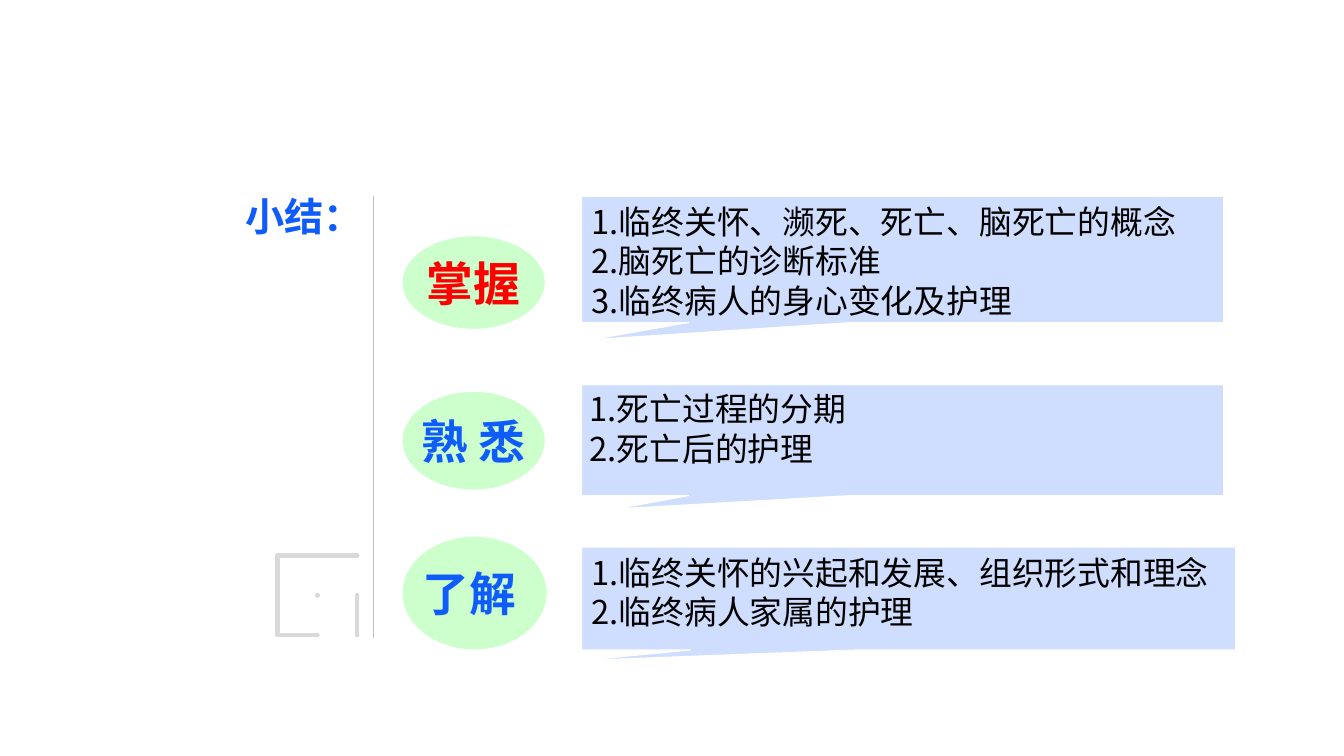
"""Build the summary slide with three learning levels and their topics."""
from math import dist
from pptx import Presentation
from pptx.dml.color import RGBColor
from pptx.enum.shapes import MSO_CONNECTOR, MSO_SHAPE
from pptx.enum.text import MSO_ANCHOR, PP_ALIGN
from pptx.oxml.xmlchemy import OxmlElement
from pptx.util import Cm, Pt

STRAIGHT = MSO_CONNECTOR.STRAIGHT
OVAL = MSO_SHAPE.OVAL
CALLOUT = MSO_SHAPE.RECTANGULAR_CALLOUT
TOP, MIDDLE = MSO_ANCHOR.TOP, MSO_ANCHOR.MIDDLE
LEFT, CENTER, RIGHT = PP_ALIGN.LEFT, PP_ALIGN.CENTER, PP_ALIGN.RIGHT
WHITE = RGBColor(0xFF, 0xFF, 0xFF)
BLACK = RGBColor(0x00, 0x00, 0x00)
RED = RGBColor(0xFF, 0x00, 0x00)
BLUE = RGBColor(0x10, 0x5C, 0xFB)
PALE_BLUE = RGBColor(0xCF, 0xDE, 0xFE)
PALE_GREEN = RGBColor(0xCC, 0xFF, 0xCC)
RULE_GREY = RGBColor(0xBF, 0xBF, 0xBF)
ICON_GREY = RGBColor(0xD9, 0xD9, 0xD9)
CHINESE_FONT = "Noto Sans CJK SC"


def write_text(shape, lines, color, anchor, alignment, spacing, **font_format):
    frame = shape.text_frame
    frame.text = "\n".join(lines)
    frame.vertical_anchor = anchor
    for paragraph in frame.paragraphs:
        paragraph.alignment = alignment
        paragraph.line_spacing = spacing
        for run in paragraph.runs:
            for name, value in font_format.items():
                setattr(run.font, name, value)
            run.font.color.rgb = color
            east_asian = OxmlElement("a:ea")
            east_asian.set("typeface", CHINESE_FONT)
            run.font._element.append(east_asian)


def add_panel(kind, left, top, width, height, color):
    shape = slide.shapes.add_shape(kind, Cm(left), Cm(top), Cm(width), Cm(height))
    shape.shadow.inherit = False
    shape.fill.solid()
    shape.fill.fore_color.rgb = color
    shape.line.color.rgb = WHITE
    shape.line.width = Pt(0.75)
    return shape


presentation = Presentation()
presentation.slide_width = Cm(33.87)
presentation.slide_height = Cm(19.05)
slide = presentation.slides.add_slide(presentation.slide_layouts[5])

title = slide.shapes.title
title_box = {"left": Cm(2.11), "top": Cm(4.72), "width": Cm(7.29), "height": Cm(1.45)}
for name, value in title_box.items():
    setattr(title, name, value)
title.fill.solid()
title.fill.fore_color.rgb = WHITE
write_text(title, ["小结："], BLUE, TOP, RIGHT, 1.0, size=Pt(28), bold=True, name="Arial")

divider = slide.shapes.add_connector(STRAIGHT, Cm(9.4), Cm(4.95), Cm(9.4), Cm(16.08))
divider.line.color.rgb = RULE_GREY
divider.line.width = Pt(0.25)
divider.element.spPr.append(OxmlElement("a:effectLst"))
title.element.addprevious(divider.element)

scroll_strokes = [
    [(7.7, 14.27), (8.18, 14.27)],
    [(7.82, 14.52), (8.08, 14.52)],
    [(7.7, 14.82), (8.18, 14.82)],
    [(7.82, 15.06), (8.08, 15.06)],
    [(8.76, 14.2), (8.76, 13.58), (6.67, 13.58), (6.67, 14.31)],
    [(6.67, 14.31), (6.88, 14.31)],
    [(6.88, 13.58), (7.12, 13.58), (7.12, 15.76), (8.46, 15.76)],
    [(8.76, 14.52), (8.97, 14.52), (8.97, 15.27)],
    [(8.76, 14.73), (8.76, 15.8)],
    [(8.76, 16), (8.76, 16.01)],
]
builder = slide.shapes.build_freeform(*scroll_strokes[0][0], scale=Cm(1))
for stroke in scroll_strokes:
    points = []
    for before, corner, after in zip(stroke, stroke[1:], stroke[2:]):
        radius = min(0.25, dist(before, corner), dist(corner, after))
        start, end = [
            [c + (p - c) * radius / dist(point, corner) for p, c in zip(point, corner)]
            for point in (before, after)
        ]
        for step in range(7):
            t = step / 6
            points.append([
                (1 - t) ** 2 * s + 2 * t * (1 - t) * c + t ** 2 * e
                for s, c, e in zip(start, corner, end)
            ])
    builder.move_to(*stroke[0])
    builder.add_line_segments(points + [stroke[-1]], close=False)
scroll_icon = builder.convert_to_shape()
scroll_icon.shadow.inherit = False
scroll_icon.fill.background()
scroll_icon.line.color.rgb = ICON_GREY
scroll_icon.line.width = Pt(3.3)
scroll_icon.line._ln.set("cap", "rnd")

levels = [
    ("掌握", RED, (10.13, 5.94, 3.61, 2.36), (14.66, 4.95, 16.18, 3.18), (-0.486, 0.636), 0.25,
     ["1.临终关怀、濒死、死亡、脑死亡的概念", "2.脑死亡的诊断标准", "3.临终病人的身心变化及护理"]),
    ("熟 悉", BLUE, (10.13, 9.86, 3.61, 2.49), (14.66, 9.7, 16.18, 2.79), (-0.445, 0.619), 0.2,
     ["1.死亡过程的分期", "2.死亡后的护理"]),
    ("了解 ", BLUE, (10.13, 13.51, 3.66, 2.87), (14.66, 13.79, 16.48, 2.59), (-0.5, 0.602), 0.25,
     ["1.临终关怀的兴起和发展、组织形式和理念", "2.临终病人家属的护理"]),
]
for level, color, oval_box, callout_box, pointer, inset, topics in levels:
    oval = add_panel(OVAL, *oval_box, PALE_GREEN)
    oval.text_frame.word_wrap = False
    write_text(oval, [level], color, MIDDLE, CENTER, 1.0,
               size=Pt(33.4), bold=True, name=CHINESE_FONT)
    callout = add_panel(CALLOUT, *callout_box, PALE_BLUE)
    for index, value in enumerate(pointer):
        callout.adjustments[index] = value
    margins = {"margin_left": inset, "margin_right": inset,
               "margin_top": inset / 2, "margin_bottom": inset / 2}
    for name, value in margins.items():
        setattr(callout.text_frame, name, Cm(value))
    write_text(callout, topics, BLACK, TOP, LEFT, Pt(28.2), size=Pt(23.4), name=CHINESE_FONT)

presentation.save("out.pptx")
